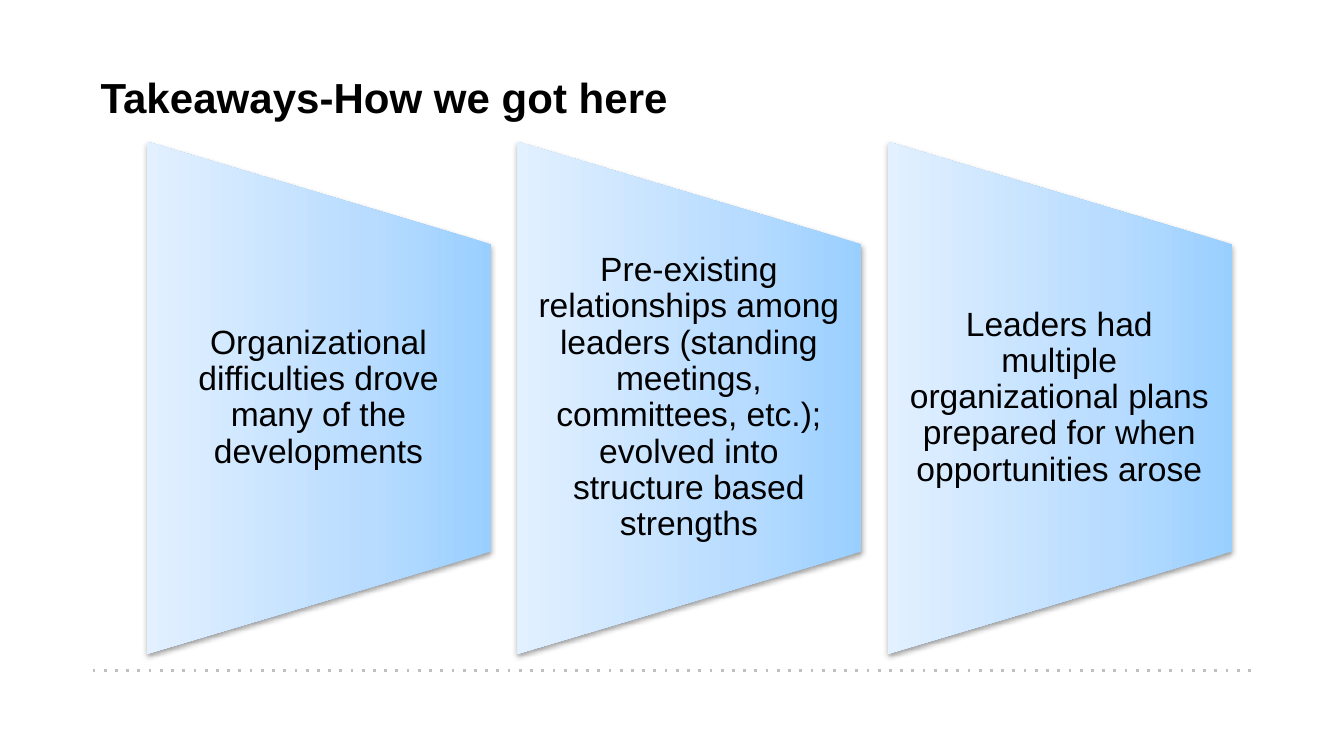
from copy import deepcopy

from lxml.etree import SubElement
from pptx import Presentation
from pptx.dml.color import RGBColor
from pptx.enum.dml import MSO_LINE
from pptx.enum.shapes import MSO_CONNECTOR, MSO_SHAPE
from pptx.enum.text import MSO_ANCHOR, MSO_AUTO_SIZE, PP_ALIGN
from pptx.oxml.ns import qn
from pptx.util import Cm, Pt

BLACK = RGBColor(0x00, 0x00, 0x00)
GREY = RGBColor(0xC0, 0xC0, 0xC0)
# Gradient from the narrow edge to the wide edge
GRADIENT = [
    (0, RGBColor(0x99, 0xCF, 0xFF)),
    (0.35, RGBColor(0xB8, 0xDC, 0xFF)),
    (1, RGBColor(0xE2, 0xF0, 0xFF)),
]

TAKEAWAYS = [
    "Organizational difficulties drove many of the developments",
    "Pre-existing relationships among leaders (standing meetings, "
    "committees, etc.); evolved into structure based strengths",
    "Leaders had multiple organizational plans prepared for when "
    "opportunities arose",
]
FIRST_CENTER, PITCH, MIDDLE = 6.03, 7.0, 7.52
PANEL_WIDTH, PANEL_HEIGHT, LABEL_HEIGHT = 6.5, 9.68, 5.79


def write(frame, text, *, size, bold=False, align=PP_ALIGN.LEFT,
          anchor=MSO_ANCHOR.TOP, spacing=1.0, margins=(0.25, 0.13, 0.25, 0.13)):
    frame.word_wrap = True
    frame.auto_size = MSO_AUTO_SIZE.NONE
    frame.vertical_anchor = anchor
    (frame.margin_left, frame.margin_top,
     frame.margin_right, frame.margin_bottom) = map(Cm, margins)
    paragraph = frame.paragraphs[0]
    paragraph.alignment = align
    paragraph.line_spacing = spacing
    run = paragraph.add_run()
    run.text = text
    run.font.name = "Arial"
    run.font.size = Pt(size)
    run.font.bold = bold
    run.font.color.rgb = BLACK


def add_title(slide, text):
    title = slide.shapes.title
    title.left, title.top = Cm(1.65), Cm(1.4)
    title.width, title.height = Cm(22.2), Cm(1.7)
    write(title.text_frame, text, size=22.5, bold=True, spacing=0.8)


def add_dotted_rule(slide):
    rule = slide.shapes.add_connector(
        MSO_CONNECTOR.STRAIGHT, Cm(1.75), Cm(12.67), Cm(23.67), Cm(12.67))
    rule.line.color.rgb = GREY
    rule.line.width = Pt(1.5)
    rule.line.dash_style = MSO_LINE.ROUND_DOT
    properties = rule._element.spPr
    properties.find(".//" + qn("a:prstDash")).set("val", "dot")
    SubElement(properties, qn("a:effectLst"))


def fill_gradient(panel):
    panel.fill.gradient()
    panel.fill.gradient_angle = 90
    stop_list = panel._element.spPr.find(".//" + qn("a:gsLst"))
    stop_list.append(deepcopy(stop_list[0]))
    for stop, (position, color) in zip(panel.fill.gradient_stops, GRADIENT):
        stop.position = position
        stop.color.rgb = color


def drop_shadow(panel):
    panel.shadow.inherit = False
    effects = panel._element.spPr.find(qn("a:effectLst"))
    shadow = SubElement(effects, qn("a:outerShdw"), blurRad=str(Pt(3.1)),
                        dist=str(Pt(1.6)), dir="5400000", rotWithShape="0")
    color = SubElement(shadow, qn("a:srgbClr"), val=str(BLACK))
    SubElement(color, qn("a:alpha"), val="38000")


def add_takeaway(slide, text, center):
    # Trapezoid turned so that its wide edge is on the left
    panel = slide.shapes.add_shape(
        MSO_SHAPE.FLOWCHART_MANUAL_OPERATION,
        Cm(center - PANEL_HEIGHT / 2), Cm(MIDDLE - PANEL_WIDTH / 2),
        Cm(PANEL_HEIGHT), Cm(PANEL_WIDTH))
    panel.rotation = 270
    panel.line.fill.background()
    fill_gradient(panel)
    drop_shadow(panel)

    # Upright label over the panel
    label = slide.shapes.add_textbox(
        Cm(center - PANEL_WIDTH / 2), Cm(MIDDLE - LABEL_HEIGHT / 2),
        Cm(PANEL_WIDTH), Cm(LABEL_HEIGHT))
    write(label.text_frame, text, size=18, align=PP_ALIGN.CENTER,
          anchor=MSO_ANCHOR.MIDDLE, spacing=0.9, margins=(0.3, 0, 0.32, 0))


def main():
    deck = Presentation()
    deck.slide_width, deck.slide_height = Cm(25.4), Cm(14.29)
    slide = deck.slides.add_slide(deck.slide_layouts[5])

    add_dotted_rule(slide)
    add_title(slide, "Takeaways-How we got here")
    for index, text in enumerate(TAKEAWAYS):
        add_takeaway(slide, text, FIRST_CENTER + index * PITCH)

    deck.save("out.pptx")


if __name__ == "__main__":
    main()
